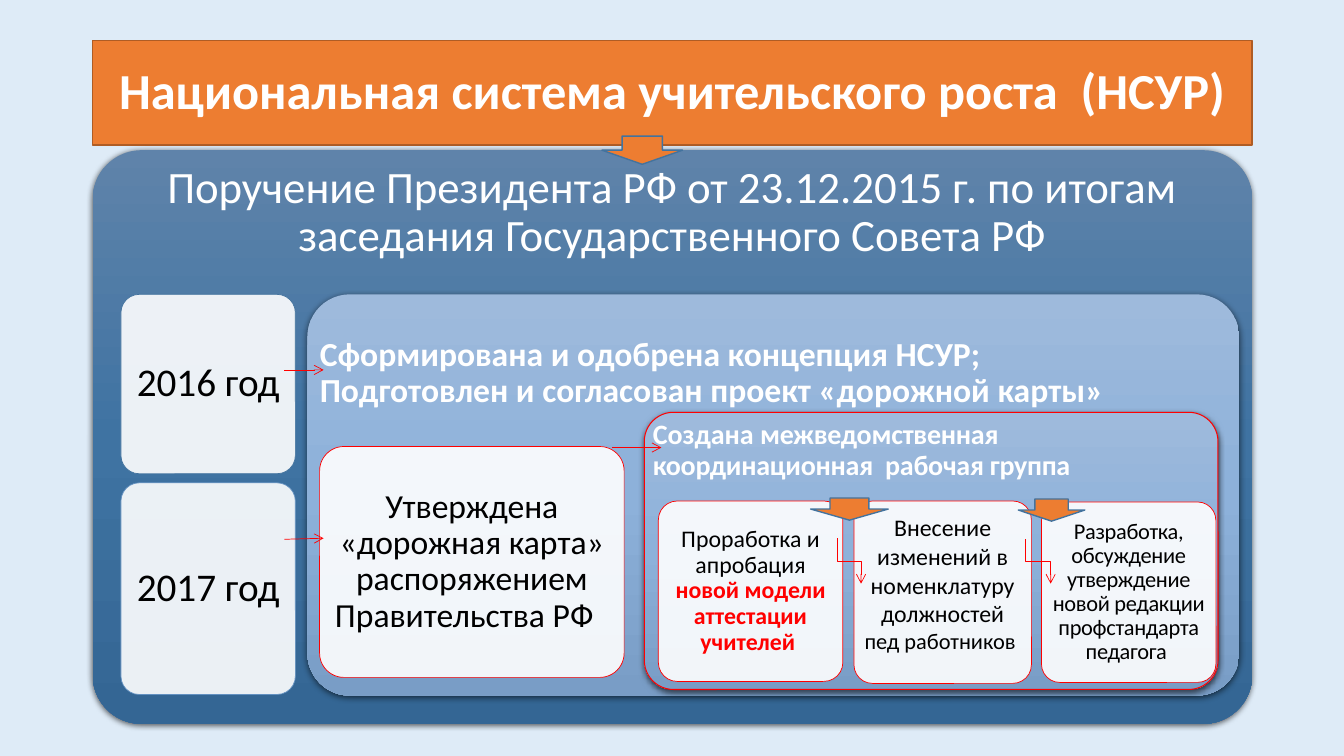
from lxml import etree
from pptx import Presentation
from pptx.dml.color import RGBColor
from pptx.enum.shapes import MSO_CONNECTOR, MSO_SHAPE
from pptx.enum.text import MSO_ANCHOR, PP_ALIGN
from pptx.oxml.ns import qn
from pptx.util import Inches, Pt

RECTANGLE, ROUNDED, DOWN_ARROW = MSO_SHAPE.RECTANGLE, MSO_SHAPE.ROUNDED_RECTANGLE, MSO_SHAPE.DOWN_ARROW
STRAIGHT, ELBOW = MSO_CONNECTOR.STRAIGHT, MSO_CONNECTOR.ELBOW
LEFT, CENTER = PP_ALIGN.LEFT, PP_ALIGN.CENTER
TOP, MIDDLE = MSO_ANCHOR.TOP, MSO_ANCHOR.MIDDLE

BACKGROUND = RGBColor(0xDE, 0xEB, 0xF7)
ORANGE = RGBColor(0xED, 0x7D, 0x31)
BROWN = RGBColor(0xAF, 0x5C, 0x24)
BLUE = RGBColor(0x43, 0x73, 0x9E)
LIGHT_BLUE = RGBColor(0x63, 0x91, 0xC1)
RED = RGBColor(0xFF, 0, 0)
WHITE = RGBColor(0xFF, 0xFF, 0xFF)
BLACK = RGBColor(0, 0, 0)
DARK_GRADIENT = (RGBColor(0x5F, 0x83, 0xAA), RGBColor(0x3F, 0x73, 0xA2), RGBColor(0x34, 0x66, 0x94))
PALE_GRADIENT = (RGBColor(0x9E, 0xBA, 0xDC), RGBColor(0x8D, 0xB1, 0xDA), RGBColor(0x79, 0x9D, 0xC6))

FONT = "Calibri"
CARD_CORNER = 0.105
CORNER_INSET = 0.29  # share of the corner radius that a rounded box keeps free of text

# A run is (text, size, colour, bold, letter spacing in points)
TITLE = [[("Национальная система учительского роста  (НСУР)", 36, WHITE, True, 0)]]

# Panels: box, corner, gradient, outline, anchor, alignment, margin, bottom margin, paragraphs
PANELS = [
    ((0.92, 1.49, 11.5, 5.69), 0.085, DARK_GRADIENT, None, TOP, CENTER, 0.13, 4.42,
     [[("Поручение Президента РФ от 23.12.2015 г. по итогам заседания Государственного Совета РФ",
        32, WHITE, False, 0)]]),
    ((3.05, 2.92, 9.24, 3.98), CARD_CORNER, PALE_GRADIENT, None, MIDDLE, LEFT, 0.1, 2.53,
     [[("Сформирована и одобрена концепция НСУР;", 24, WHITE, True, 0)],
      [("Подготовлен и согласован проект «дорожной карты»", 24, WHITE, True, 0)]]),
    ((6.39, 4.09, 5.69, 2.75), CARD_CORNER, PALE_GRADIENT, RED, TOP, LEFT, 0.08, 1.28,
     [[("Создана ", 20, WHITE, True, 0),
       ("межведомственная  координационная  рабочая группа", 20, WHITE, True, -0.2)]]),
]

# Cards: box, outline, margin, bottom margin, line spacing, runs
CARDS = [
    ((1.2, 2.92, 1.73, 1.78), BLUE, 0.12, 0.12, 0.9, [("2016 год", 28, BLACK, False, 0)]),
    ((1.2, 4.79, 1.73, 2.1), LIGHT_BLUE, 0.12, 0.12, 0.9, [("2017 год", 28, BLACK, False, 0)]),
    ((3.17, 4.43, 3.02, 2.29), RED, 0.1, 0.1, 0.9,
     [("Утверждена «дорожная карта» распоряжением Правительства РФ  ", 24, BLACK, False, 0)]),
    ((6.53, 4.97, 1.83, 1.79), RED, 0.07, 0.07, 0.9,
     [("Проработка и апробация ", 17, BLACK, False, 0),
      ("новой модели аттестации учителей ", 17, RED, True, 0)]),
    ((8.47, 4.97, 1.76, 1.81), RED, 0.07, 0.24, 1.0,
     [("Внесение изменений в номенклатуру должностей ", 17, BLACK, False, 0),
      ("пед работников ", 16, BLACK, False, 0)]),
    ((10.33, 4.98, 1.73, 1.79), RED, 0.07, 0.07, 0.9,
     [("Разработка, обсуждение утверждение новой редакции профстандарта педагога ",
       16, BLACK, False, -0.2)]),
]

BLOCK_ARROWS = [(5.97, 1.35, 0.8, 0.28), (8.04, 4.94, 0.77, 0.22), (10.1, 4.95, 0.66, 0.22)]
STRAIGHT_ARROWS = [(2.82, 3.67, 3.21, 3.67), (2.82, 5.35, 3.21, 5.34), (6.07, 4.44, 6.56, 4.44)]
BENT_ARROWS = [(8.31, 5.34, 8.54, 5.79), (10.17, 5.35, 10.42, 5.79)]


def add_box(slide, kind, box, outline=None, width=1.0, corner=None):
    shape = slide.shapes.add_shape(kind, *map(Inches, box))
    shape.shadow.inherit = False
    if corner is not None:
        shape.adjustments[0] = corner
    if outline is None:
        shape.line.fill.background()
    else:
        shape.line.color.rgb = outline
        shape.line.width = Pt(width)
    return shape


def fill_solid(shape, color, opacity=100):
    shape.fill.solid()
    shape.fill.fore_color.rgb = color
    if opacity < 100:
        node = shape._element.spPr.find(qn("a:solidFill"))[0]
        etree.SubElement(node, qn("a:alpha"), val=str(opacity * 1000))


def fill_gradient(shape, colors):
    """Fill from top to bottom with evenly spaced colours."""
    shape.fill.gradient()
    shape.fill.gradient_angle = 270
    stops = shape._element.spPr.find(".//" + qn("a:gsLst"))
    for stop in list(stops):
        stops.remove(stop)
    for index, color in enumerate(colors):
        position = index * 100000 // (len(colors) - 1)
        stop = etree.SubElement(stops, qn("a:gs"), pos=str(position))
        etree.SubElement(stop, qn("a:srgbClr"), val=str(color))


def add_shadow(shape):
    effects = shape._element.spPr.find(qn("a:effectLst"))
    shadow = etree.SubElement(effects, qn("a:outerShdw"), blurRad=str(Pt(4.5)), dist=str(Pt(1.5)),
                              dir="5400000", algn="ctr", rotWithShape="0")
    color = etree.SubElement(shadow, qn("a:srgbClr"), val="000000")
    etree.SubElement(color, qn("a:alpha"), val="63000")


def write_text(shape, paragraphs, margin, bottom, anchor=MIDDLE, alignment=CENTER,
               spacing=0.9, corner=0.0):
    """Write runs, with margins measured from the outer edge of the shape."""
    frame = shape.text_frame
    frame.word_wrap = True
    frame.vertical_anchor = anchor
    corner_space = CORNER_INSET * corner * min(shape.width, shape.height)
    side = max(0, int(Inches(margin) - corner_space))
    frame.margin_left = frame.margin_right = frame.margin_top = side
    frame.margin_bottom = max(0, int(Inches(bottom) - corner_space))
    for index, runs in enumerate(paragraphs):
        paragraph = frame.add_paragraph() if index else frame.paragraphs[0]
        paragraph.alignment = alignment
        paragraph.line_spacing = spacing
        for text, size, color, bold, tracking in runs:
            run = paragraph.add_run()
            run.text = text
            run.font.name = FONT
            run.font.size = Pt(size)
            run.font.bold = bold
            run.font.color.rgb = color
            if tracking:
                run._r.get_or_add_rPr().set("spc", str(round(tracking * 100)))


def add_arrow(slide, kind, points):
    connector = slide.shapes.add_connector(kind, *map(Inches, points))
    connector.line.color.rgb = RED
    connector.line.width = Pt(0.5)
    etree.SubElement(connector.line._get_or_add_ln(), qn("a:tailEnd"), type="arrow")
    etree.SubElement(connector._element.spPr, qn("a:effectLst"))
    return connector


def add_bent_arrow(slide, x1, y1, x2, y2):
    """Arrow that goes down, across and down: an elbow turned by 270 degrees."""
    middle_x, middle_y = (x1 + x2) / 2, (y1 + y2) / 2
    half_width, half_height = (y2 - y1) / 2, (x2 - x1) / 2
    connector = add_arrow(slide, ELBOW, (middle_x + half_width, middle_y - half_height,
                                         middle_x - half_width, middle_y + half_height))
    connector._element.spPr.find(qn("a:xfrm")).set("rot", str(270 * 60000))


def main():
    presentation = Presentation()
    presentation.slide_width, presentation.slide_height = Inches(13.33), Inches(7.5)
    slide = presentation.slides.add_slide(presentation.slide_layouts[6])
    slide.background.fill.solid()
    slide.background.fill.fore_color.rgb = BACKGROUND

    title = add_box(slide, RECTANGLE, (0.92, 0.4, 11.5, 1.04), BROWN)
    fill_solid(title, ORANGE)
    write_text(title, TITLE, 0.05, 0.05)

    for box, corner, gradient, outline, anchor, alignment, margin, bottom, paragraphs in PANELS:
        panel = add_box(slide, ROUNDED, box, outline, 0.75, corner)
        fill_gradient(panel, gradient)
        add_shadow(panel)
        write_text(panel, paragraphs, margin, bottom, anchor, alignment, corner=corner)

    for box, outline, margin, bottom, spacing, runs in CARDS:
        card = add_box(slide, ROUNDED, box, outline, 0.5, CARD_CORNER)
        fill_solid(card, WHITE, 90)
        write_text(card, [runs], margin, bottom, spacing=spacing, corner=CARD_CORNER)

    for box in BLOCK_ARROWS:
        fill_solid(add_box(slide, DOWN_ARROW, box, BLUE), ORANGE)
    for points in STRAIGHT_ARROWS:
        add_arrow(slide, STRAIGHT, points)
    for points in BENT_ARROWS:
        add_bent_arrow(slide, *points)

    presentation.save("out.pptx")


if __name__ == "__main__":
    main()
